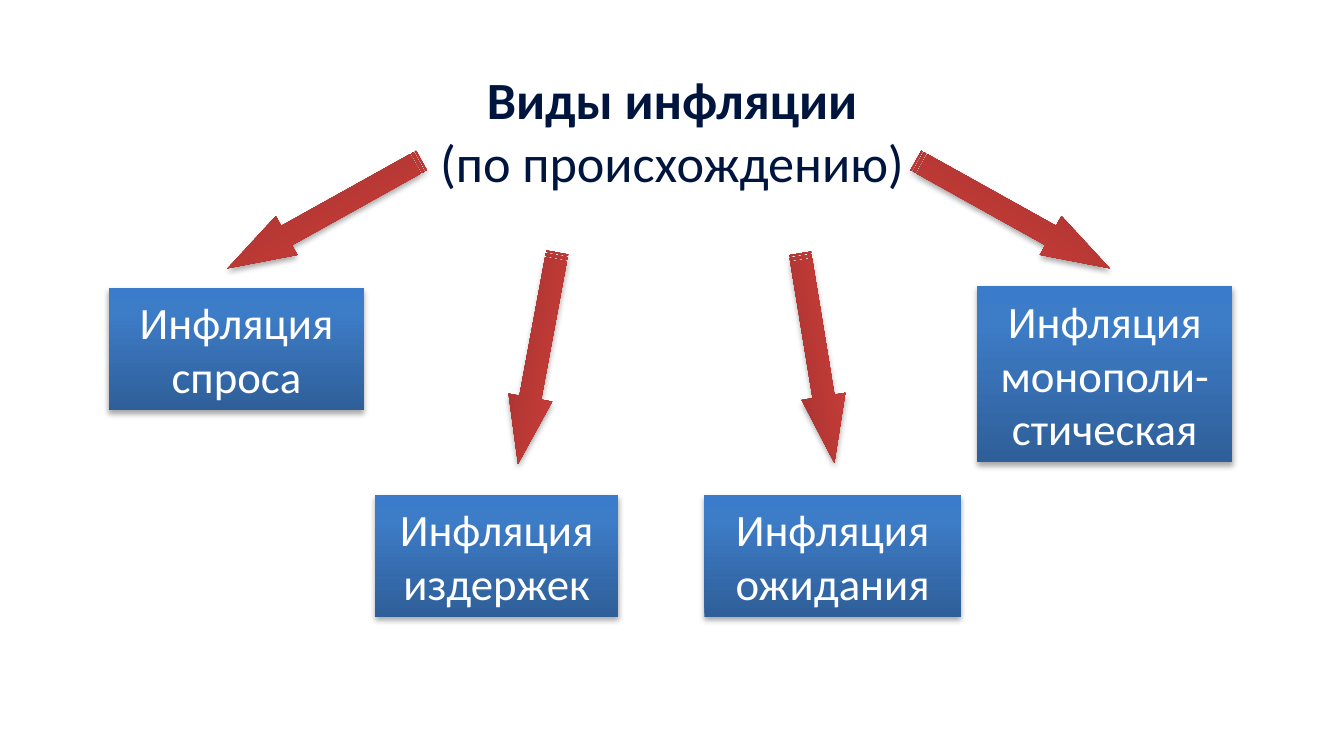
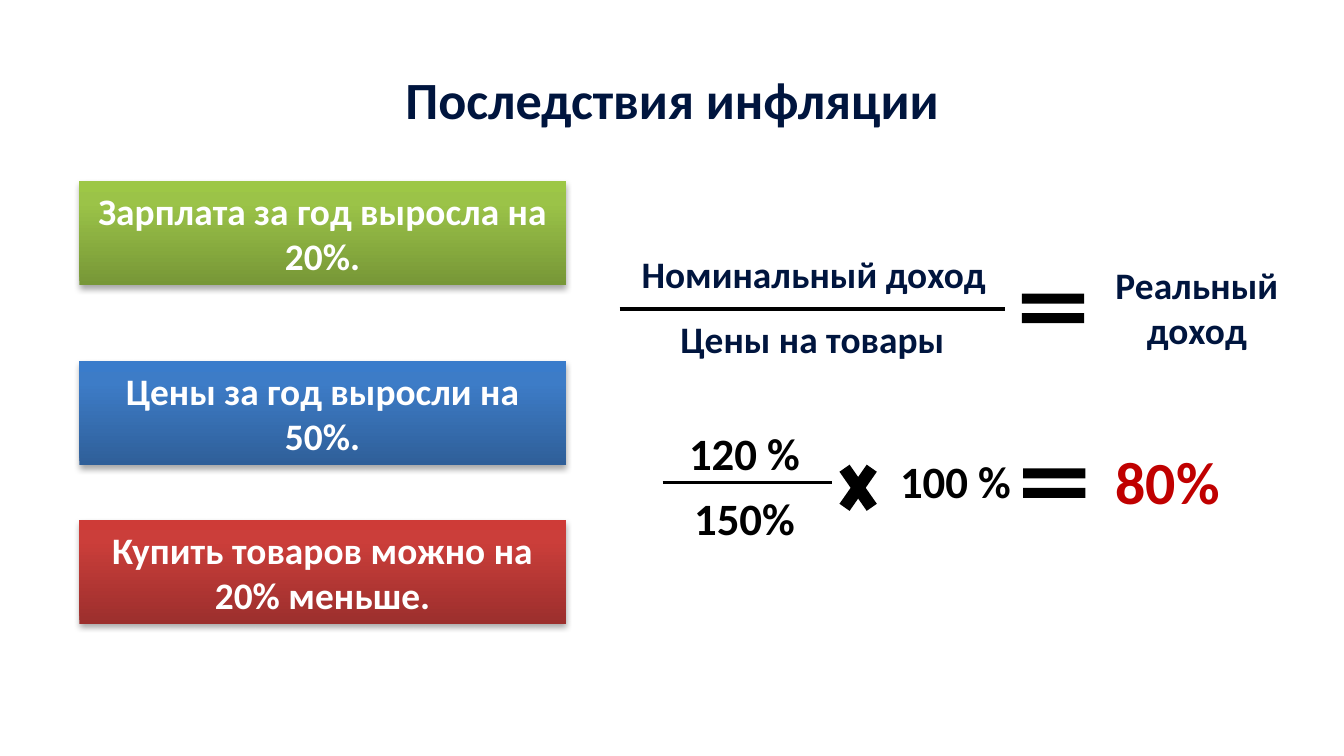
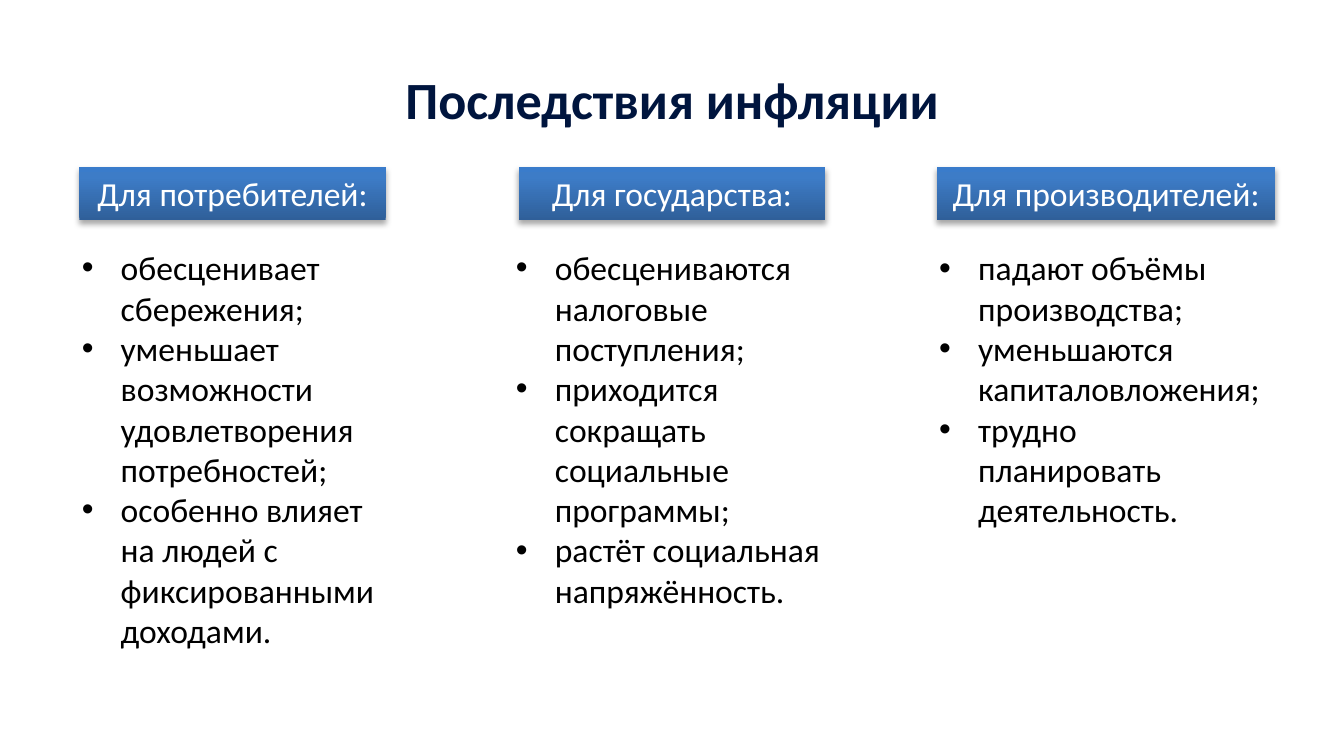
"""Build three slides on the kinds and consequences of inflation."""
import dataclasses

import lxml.etree
import pptx
import pptx.dml.color
import pptx.enum.shapes
import pptx.enum.text
import pptx.oxml.ns
import pptx.util

Inches = pptx.util.Inches
MSO_SHAPE = pptx.enum.shapes.MSO_SHAPE
ALIGN = pptx.enum.text.PP_ALIGN
qn = pptx.oxml.ns.qn


@dataclasses.dataclass(frozen=True)
class Theme:
    """Hold the colours, gradients and type sizes of the slides."""
    font: str = "Calibri"
    navy: str = "00153E"
    black: str = "000000"
    white: str = "FFFFFF"
    crimson: str = "C00000"
    blue: tuple = ("2F5F99", "3D7CC7", "3A7CCB")
    red: tuple = ("9C2F2D", "CB3E3A", "CE3B37")
    green: tuple = ("779737", "9BC348", "9DC746")
    stops: tuple = (0, 80, 100)
    title: int = 28
    result: int = 32
    large: int = 24
    medium: int = 20
    body: int = 18
    rule: int = 2


THEME = Theme()


def rgb(value):
    """Turn a hex string into a colour."""
    return pptx.dml.color.RGBColor.from_string(value)


def add_xml(parent, tag, **attrs):
    """Append a DrawingML element and return it."""
    return lxml.etree.SubElement(parent, qn(tag), attrs)


def set_text(sp, text, size, color, bold=False, align=ALIGN.CENTER):
    """Fill a shape with evenly formatted text."""
    tf = sp.text_frame
    tf.word_wrap = True
    tf.auto_size = pptx.enum.text.MSO_AUTO_SIZE.SHAPE_TO_FIT_TEXT
    tf.text = text
    for p in tf.paragraphs:
        p.alignment = align
        for r in p.runs:
            r.font.name = THEME.font
            r.font.size = pptx.util.Pt(size)
            r.font.bold = bold
            r.font.color.rgb = rgb(color)


def add_text(shapes, box, text, size, color, bold=True, align=ALIGN.CENTER):
    """Add a text box and return it."""
    sp = shapes.add_textbox(*map(Inches, box))
    set_text(sp, text, size, color, bold, align)
    return sp


def add_raised(shapes, kind, box, colors):
    """Add a shape with a vertical gradient and a soft shadow."""
    sp = shapes.add_shape(kind, *map(Inches, box))
    sp.line.fill.background()
    sp.fill.gradient()
    sp.fill.gradient_angle = 90
    spPr = sp.element.spPr
    stops = spPr.find(".//" + qn("a:gsLst"))
    for stop in list(stops):
        stops.remove(stop)
    for pos, color in zip(THEME.stops, colors):
        add_xml(add_xml(stops, "a:gs", pos=str(pos * 1000)), "a:srgbClr", val=color)
    sp.shadow.inherit = False
    shadow = add_xml(spPr.find(qn("a:effectLst")), "a:outerShdw", blurRad="40000",
                     dist="23000", dir="5400000", rotWithShape="0")
    add_xml(add_xml(shadow, "a:srgbClr", val=THEME.black), "a:alpha", val="35000")
    return sp


def add_card(shapes, box, text, size, colors=THEME.blue, bold=False):
    """Add a gradient rectangle with a white caption."""
    sp = add_raised(shapes, MSO_SHAPE.RECTANGLE, box, colors)
    set_text(sp, text, size, THEME.white, bold)


def add_arrow(shapes, box, angle, flip=False):
    """Add a rotated striped red arrow."""
    sp = add_raised(shapes, MSO_SHAPE.STRIPED_RIGHT_ARROW, box, THEME.red)
    sp.adjustments[0] = 0.5
    sp.adjustments[1] = 1.52
    sp.rotation = angle
    if flip:
        sp.element.spPr.xfrm.set("flipH", "1")


def add_sign(shapes, kind, box):
    """Add a black mathematical sign."""
    sp = shapes.add_shape(kind, *map(Inches, box))
    sp.fill.solid()
    sp.fill.fore_color.rgb = rgb(THEME.black)
    sp.line.fill.background()
    sp.shadow.inherit = False
    return sp


def add_equals(shapes, left, top):
    """Add an equals sign."""
    sp = add_sign(shapes, MSO_SHAPE.MATH_EQUAL, (left, top, 0.63, 0.31))
    sp.adjustments[0] = 0.24
    sp.adjustments[1] = 0.23


def add_fraction_bar(shapes, left, right, y):
    """Add the horizontal rule of a fraction."""
    line = shapes.add_connector(pptx.enum.shapes.MSO_CONNECTOR.STRAIGHT,
                                *map(Inches, (left, y, right, y)))
    line.line.width = pptx.util.Pt(THEME.rule)
    line.line.color.rgb = rgb(THEME.black)
    add_xml(line.element.spPr, "a:effectLst")


def add_bullets(shapes, box, items):
    """Add a bulleted list."""
    sp = add_text(shapes, box, "\n".join(items), THEME.body, THEME.black, False, ALIGN.LEFT)
    indent = Inches(0.29)
    for p in sp.text_frame.paragraphs:
        pPr = p._p.get_or_add_pPr()
        pPr.set("marL", str(indent))
        pPr.set("indent", str(-indent))
        add_xml(pPr, "a:buFont", typeface="Arial")
        add_xml(pPr, "a:buChar", char="•")


def add_slide(prs, title, subtitle=None):
    """Add a blank slide with its title and return its shapes."""
    shapes = prs.slides.add_slide(prs.slide_layouts[6]).shapes
    text, height = (f"{title}\n{subtitle}", 1.04) if subtitle else (title, 0.57)
    sp = add_text(shapes, (1.85, 0.45, 6.3, height), text, THEME.title, THEME.navy)
    for p in sp.text_frame.paragraphs[1:]:
        p.runs[0].font.bold = False
    return shapes


def build_kinds(prs):
    """Show four kinds of inflation by origin."""
    shapes = add_slide(prs, "Виды инфляции", "(по происхождению)")
    kinds = (
        ("спроса", (0.81, 2.14, 1.9, 0.91), (1.59, 1.43, 1.65, 0.33), 150.9, False),
        ("издержек", (2.79, 3.68, 1.81, 0.91), (3.2, 2.5, 1.6, 0.33), 100.5, False),
        ("ожидания", (5.24, 3.68, 1.91, 0.91), (5.29, 2.5, 1.58, 0.33), 80.7, False),
        ("монополи-стическая", (7.27, 2.13, 1.9, 1.31), (6.71, 1.43, 1.65, 0.33), 209.1, True),
    )
    for kind, card, arrow, angle, flip in kinds:
        add_arrow(shapes, arrow, angle, flip)
        add_card(shapes, card, f"Инфляция {kind}", THEME.large)


def build_income(prs):
    """Work out the real income after inflation."""
    shapes = add_slide(prs, "Последствия инфляции")
    facts = (
        (1.35, "Зарплата за год выросла на 20%.", THEME.green),
        (2.69, "Цены за год выросли на 50%.", THEME.blue),
        (3.87, "Купить товаров можно на 20% меньше.", THEME.red),
    )
    for top, text, colors in facts:
        add_card(shapes, (0.59, top, 3.62, 0.77), text, THEME.medium, colors, True)

    formula = shapes.add_group_shape().shapes
    add_text(formula, (4.62, 1.82, 2.87, 0.44), "Номинальный доход", THEME.medium, THEME.navy)
    add_fraction_bar(formula, 4.61, 7.48, 2.3)
    add_text(formula, (4.61, 2.3, 2.87, 0.44), "Цены на товары", THEME.medium, THEME.navy)
    add_equals(formula, 7.52, 2.14)
    add_text(formula, (8.16, 1.9, 1.49, 0.77), "Реальный доход", THEME.medium, THEME.navy)

    for left, top, text in ((5.01, 3.12, "120 %"), (5.01, 3.6, "150%"), (6.58, 3.33, "100 %")):
        add_text(shapes, (left, top, 1.06, 0.5), text, THEME.large, THEME.black)
    add_fraction_bar(shapes, 4.93, 6.19, 3.59)
    add_sign(shapes, MSO_SHAPE.MATH_MULTIPLY, (6.19, 3.35, 0.39, 0.56))
    add_equals(shapes, 7.53, 3.44)
    add_text(shapes, (8.16, 3.26, 1.06, 0.64), "80%", THEME.result, THEME.crimson)


def build_consequences(prs):
    """List the consequences for three groups."""
    shapes = add_slide(prs, "Последствия инфляции")
    groups = (
        ("Для потребителей:", 0.59, 2.28, (0.51, 1.79, 2.52, 3.13),
         ("обесценивает сбережения;",
          "уменьшает возможности удовлетворения потребностей;",
          "особенно влияет на людей с фиксированными доходами.")),
        ("Для государства:", 3.86, 2.28, (3.74, 1.79, 2.47, 3.13),
         ("обесцениваются налоговые поступления;",
          "приходится сокращать социальные программы;",
          "растёт социальная напряжённость.")),
        ("Для производителей:", 6.97, 2.52, (6.89, 1.79, 2.6, 2.22),
         ("падают объёмы производства;",
          "уменьшаются капиталовложения;",
          "трудно планировать деятельность.")),
    )
    for header, left, width, box, items in groups:
        add_card(shapes, (left, 1.24, width, 0.4), header, THEME.body)
        add_bullets(shapes, box, items)


def main():
    """Build and save the presentation."""
    prs = pptx.Presentation()
    prs.slide_width = Inches(10)
    prs.slide_height = Inches(10) * 9 // 16
    build_kinds(prs)
    build_income(prs)
    build_consequences(prs)
    prs.save("out.pptx")


if __name__ == "__main__":
    main()
